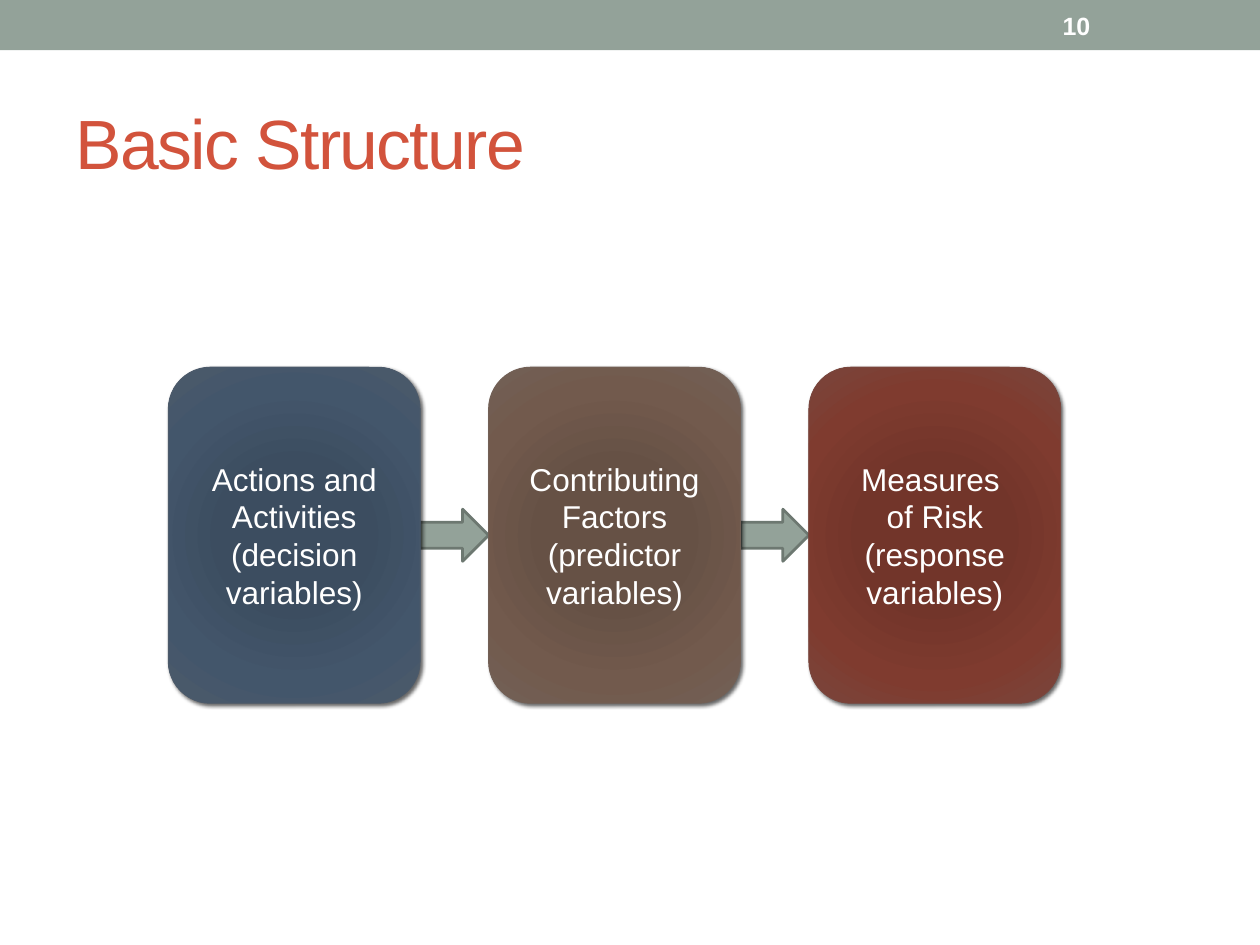
import dataclasses

import pptx
import pptx.dml.color
import pptx.enum.shapes
import pptx.enum.text
import pptx.oxml
import pptx.oxml.ns
import pptx.util

Cm = pptx.util.Cm
Pt = pptx.util.Pt
MSO_SHAPE = pptx.enum.shapes.MSO_SHAPE
PP_ALIGN = pptx.enum.text.PP_ALIGN

COLOURS = {
    "sage": "93A299",
    "sage_edge": "6D7871",
    "title": "D2533C",
    "white": "FFFFFF",
    "shadow": "000000",
}
GRADIENTS = {
    "blue": ("3B4D61", "3C4D60", "43566B", "4C5A6A"),
    "brown": ("685044", "665145", "725A4D", "726056"),
    "red": ("743327", "72352A", "7F3B2F", "79463D"),
}
GRADIENT_STOPS = (0, 34, 70, 100)

SLIDE_WIDTH, SLIDE_HEIGHT = 33.83, 25.37
STAGE_LEFT, STAGE_TOP = 4.52, 9.86
STAGE_WIDTH, STAGE_HEIGHT = 6.76, 9.02
STAGE_PITCH = 8.6
ARROW_HEIGHT = 1.4


@dataclasses.dataclass
class Stage:
    lines: tuple[str, ...]
    gradient: str


STAGES = (
    Stage(("Actions and Activities", "(decision variables)"), "blue"),
    Stage(("Contributing Factors (predictor variables)",), "brown"),
    Stage(("Measures ", "of Risk", "(response variables)"), "red"),
)


def rgb(hex_colour: str) -> pptx.dml.color.RGBColor:
    return pptx.dml.color.RGBColor.from_string(hex_colour)


def write(frame, lines: tuple[str, ...], size: float, colour: str,
          align=PP_ALIGN.LEFT, bold: bool = False) -> None:
    """Fill a text frame, one run per paragraph."""
    frame.word_wrap = True
    frame.auto_size = pptx.enum.text.MSO_AUTO_SIZE.NONE
    frame.vertical_anchor = pptx.enum.text.MSO_ANCHOR.MIDDLE
    frame.margin_left = frame.margin_right = Cm(0.34)
    frame.margin_top = frame.margin_bottom = Cm(0.17)
    for index, line in enumerate(lines):
        paragraph = frame.paragraphs[0] if index == 0 else frame.add_paragraph()
        paragraph.alignment = align
        run = paragraph.add_run()
        run.text = line
        run.font.name = "Arial"
        run.font.size = Pt(size)
        run.font.bold = bold
        run.font.color.rgb = rgb(colour)


def add_flat_shape(slide, preset, left: float, top: float, width: float, height: float):
    shape = slide.shapes.add_shape(preset, Cm(left), Cm(top), Cm(width), Cm(height))
    shape.shadow.inherit = False
    shape.fill.solid()
    shape.fill.fore_color.rgb = rgb(COLOURS["sage"])
    shape.line.fill.background()
    return shape


def add_arrow(slide, left: float) -> None:
    top = STAGE_TOP + (STAGE_HEIGHT - ARROW_HEIGHT) / 2
    arrow = add_flat_shape(slide, MSO_SHAPE.RIGHT_ARROW, left, top,
                           STAGE_PITCH - STAGE_WIDTH, ARROW_HEIGHT)
    arrow.line.color.rgb = rgb(COLOURS["sage_edge"])
    arrow.line.width = Pt(2.08)


def add_stage(slide, stage: Stage, left: float) -> None:
    box = slide.shapes.add_shape(MSO_SHAPE.ROUNDED_RECTANGLE, Cm(left), Cm(STAGE_TOP),
                                 Cm(STAGE_WIDTH), Cm(STAGE_HEIGHT))
    shades = GRADIENTS[stage.gradient]
    namespace = pptx.oxml.ns.nsdecls("a")
    properties = box._element.spPr

    # Radial gradient
    stops = "".join(
        f'<a:gs pos="{position * 1000}"><a:srgbClr val="{shade}"/></a:gs>'
        for position, shade in zip(GRADIENT_STOPS, shades)
    )
    properties.append(pptx.oxml.parse_xml(
        f'<a:gradFill {namespace} rotWithShape="1"><a:gsLst>{stops}</a:gsLst>'
        '<a:path path="circle"><a:fillToRect l="100000" t="100000" r="100000" b="100000"/>'
        '</a:path></a:gradFill>'))
    box.line.color.rgb = rgb(shades[-1])
    box.line.width = Pt(0.75)

    # Soft shadow
    box.shadow.inherit = False
    effects = properties.find(pptx.oxml.ns.qn("a:effectLst"))
    effects.append(pptx.oxml.parse_xml(
        f'<a:outerShdw {namespace} blurRad="{Pt(3)}" dist="{Pt(2)}" dir="{45 * 60000}" '
        f'rotWithShape="0"><a:srgbClr val="{COLOURS["shadow"]}">'
        '<a:alpha val="60000"/></a:srgbClr></a:outerShdw>'))

    write(box.text_frame, stage.lines, 24, COLOURS["white"], PP_ALIGN.CENTER)


def main() -> None:
    deck = pptx.Presentation()
    deck.slide_width, deck.slide_height = Cm(SLIDE_WIDTH), Cm(SLIDE_HEIGHT)
    slide = deck.slides.add_slide(deck.slide_layouts[5])

    # Header band and page number
    add_flat_shape(slide, MSO_SHAPE.RECTANGLE, 0, 0, SLIDE_WIDTH, 1.35)
    page_number = slide.shapes.add_textbox(Cm(28.19), Cm(0.08), Cm(3.94), Cm(1.22))
    write(page_number.text_frame, ("10",), 19, COLOURS["white"], bold=True)

    # Title
    title = slide.shapes.title
    title.left, title.top, title.width, title.height = Cm(1.7), Cm(1.98), Cm(30.45), Cm(3.66)
    write(title.text_frame, ("Basic Structure",), 53, COLOURS["title"])
    title.text_frame.paragraphs[0].runs[0]._r.get_or_add_rPr().set("spc", "-130")

    # Arrows lie behind the stages they join
    lefts = [STAGE_LEFT + index * STAGE_PITCH for index in range(len(STAGES))]
    for left in lefts[:-1]:
        add_arrow(slide, left + STAGE_WIDTH)
    for stage, left in zip(STAGES, lefts):
        add_stage(slide, stage, left)

    deck.save("out.pptx")


if __name__ == "__main__":
    main()
